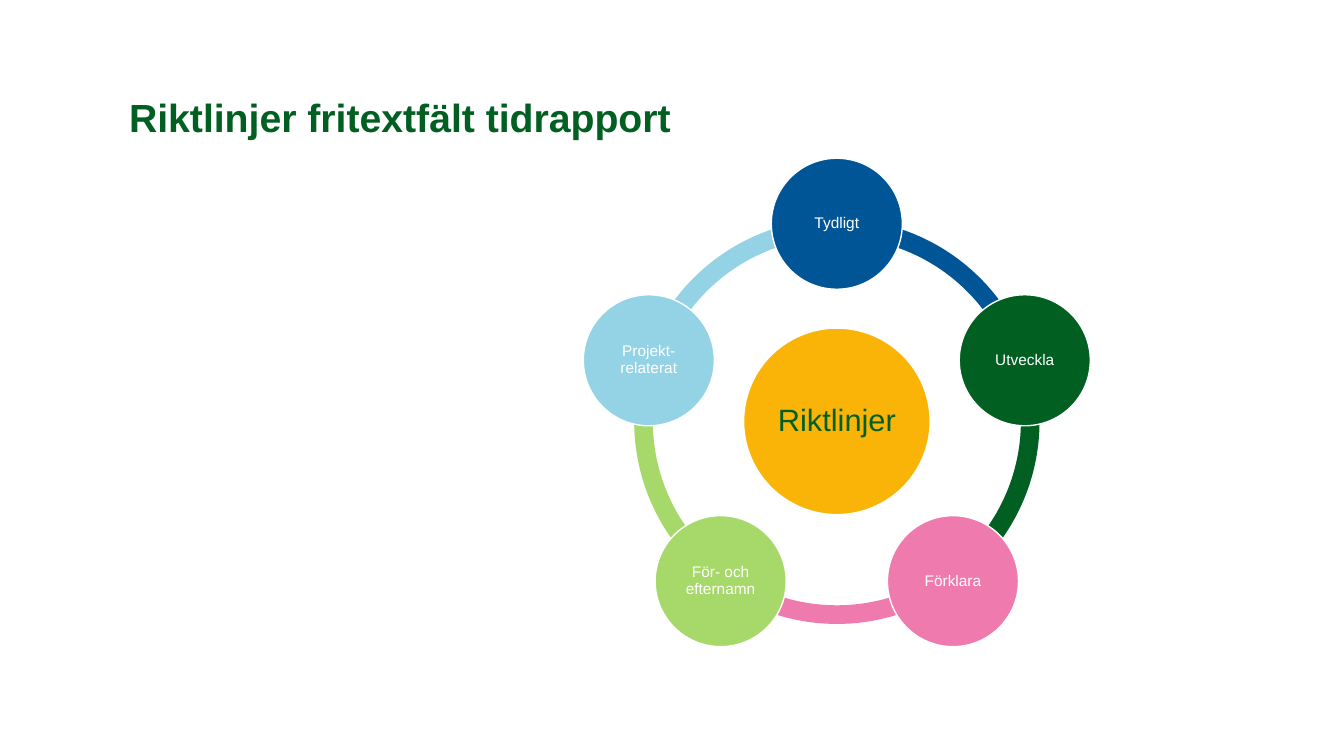
import math

import pptx
import pptx.dml.color
import pptx.enum.shapes
import pptx.enum.text
import pptx.util

RGBColor = pptx.dml.color.RGBColor
Inches = pptx.util.Inches
MSO_SHAPE = pptx.enum.shapes.MSO_SHAPE
MSO_ANCHOR = pptx.enum.text.MSO_ANCHOR
PP_ALIGN = pptx.enum.text.PP_ALIGN

WHITE = RGBColor(0xFF, 0xFF, 0xFF)
BLUE = RGBColor(0x00, 0x55, 0x96)
GREEN = RGBColor(0x00, 0x5F, 0x21)
PINK = RGBColor(0xEE, 0x7A, 0xAE)
LIME = RGBColor(0xA6, 0xD9, 0x6A)
LIGHT_BLUE = RGBColor(0x94, 0xD3, 0xE5)
YELLOW = RGBColor(0xFA, 0xB4, 0x07)

GUIDELINES = [
    ("Tydligt", BLUE),
    ("Utveckla", GREEN),
    ("Förklara", PINK),
    ("För- och efternamn", LIME),
    ("Projekt-relaterat", LIGHT_BLUE),
]
RING_SIZE = 4.02
RING_THICKNESS = 0.046
HUB_SIZE = 1.85
NODE_SIZE = 1.3
ADJUSTMENT_PER_DEGREE = 0.6


def write_text(text_frame, text, size, color, bold=False):
    """Write one formatted run into the first paragraph."""
    text_frame.word_wrap = True
    paragraph = text_frame.paragraphs[0]
    paragraph.line_spacing = 0.9
    run = paragraph.add_run()
    run.text = text
    run.font.name = "Arial"
    run.font.size = pptx.util.Pt(size)
    run.font.bold = bold
    run.font.color.rgb = color
    return paragraph


def add_title(slide, left, top, width, height):
    """Place the slide title in its placeholder."""
    title = slide.shapes.title
    title.left, title.top = Inches(left), Inches(top)
    title.width, title.height = Inches(width), Inches(height)
    title.text_frame.vertical_anchor = MSO_ANCHOR.TOP
    paragraph = write_text(
        title.text_frame, "Riktlinjer fritextfält tidrapport", 28, GREEN, bold=True)
    paragraph.alignment = PP_ALIGN.LEFT


def add_centred_shape(shapes, kind, center_x, center_y, size, fill):
    """Add a filled square-box shape around a centre point."""
    shape = shapes.add_shape(
        kind, Inches(center_x - size / 2), Inches(center_y - size / 2),
        Inches(size), Inches(size))
    shape.shadow.inherit = False
    shape.fill.solid()
    shape.fill.fore_color.rgb = fill
    shape.line.fill.background()
    return shape


def add_circle(shapes, center_x, center_y, size, fill, text, text_size, text_color):
    """Add a white-edged circle with a centred label."""
    circle = add_centred_shape(shapes, MSO_SHAPE.OVAL, center_x, center_y, size, fill)
    circle.line.color.rgb = WHITE
    circle.line.width = pptx.util.Pt(1)
    frame = circle.text_frame
    frame.margin_left = frame.margin_right = Inches(0.02)
    frame.margin_top = frame.margin_bottom = Inches(0.02)
    frame.vertical_anchor = MSO_ANCHOR.MIDDLE
    write_text(frame, text, text_size, text_color).alignment = PP_ALIGN.CENTER


def add_guideline_cycle(slide, left, top, size):
    """Draw the ring of guidelines around its hub."""
    shapes = slide.shapes.add_group_shape().shapes
    center_x, center_y = left + size / 2, top + size / 2
    orbit = 1.96 * size / RING_SIZE
    step = 360 / len(GUIDELINES)
    angles = [(270 + step * index) % 360 for index in range(len(GUIDELINES))]
    for (text, color), angle in reversed(list(zip(GUIDELINES, angles))):
        arc = add_centred_shape(
            shapes, MSO_SHAPE.BLOCK_ARC, center_x, center_y, size, color)
        arc.adjustments[0] = angle * ADJUSTMENT_PER_DEGREE
        arc.adjustments[1] = (angle + step) % 360 * ADJUSTMENT_PER_DEGREE
        arc.adjustments[2] = RING_THICKNESS
    add_circle(shapes, center_x, center_y, HUB_SIZE, YELLOW, "Riktlinjer", 22, GREEN)
    for (text, color), angle in zip(GUIDELINES, angles):
        add_circle(
            shapes,
            center_x + orbit * math.cos(math.radians(angle)),
            center_y + orbit * math.sin(math.radians(angle)),
            NODE_SIZE, color, text, 11, WHITE)


def main():
    """Build and save the presentation."""
    presentation = pptx.Presentation()
    presentation.slide_width = Inches(13.33)
    presentation.slide_height = Inches(7.5)
    slide = presentation.slides.add_slide(presentation.slide_layouts[5])
    add_title(slide, 1.18, 0.93, 5.78, 1.75)
    add_guideline_cycle(slide, 6.29, 2.17, RING_SIZE)
    presentation.save("out.pptx")


if __name__ == "__main__":
    main()
